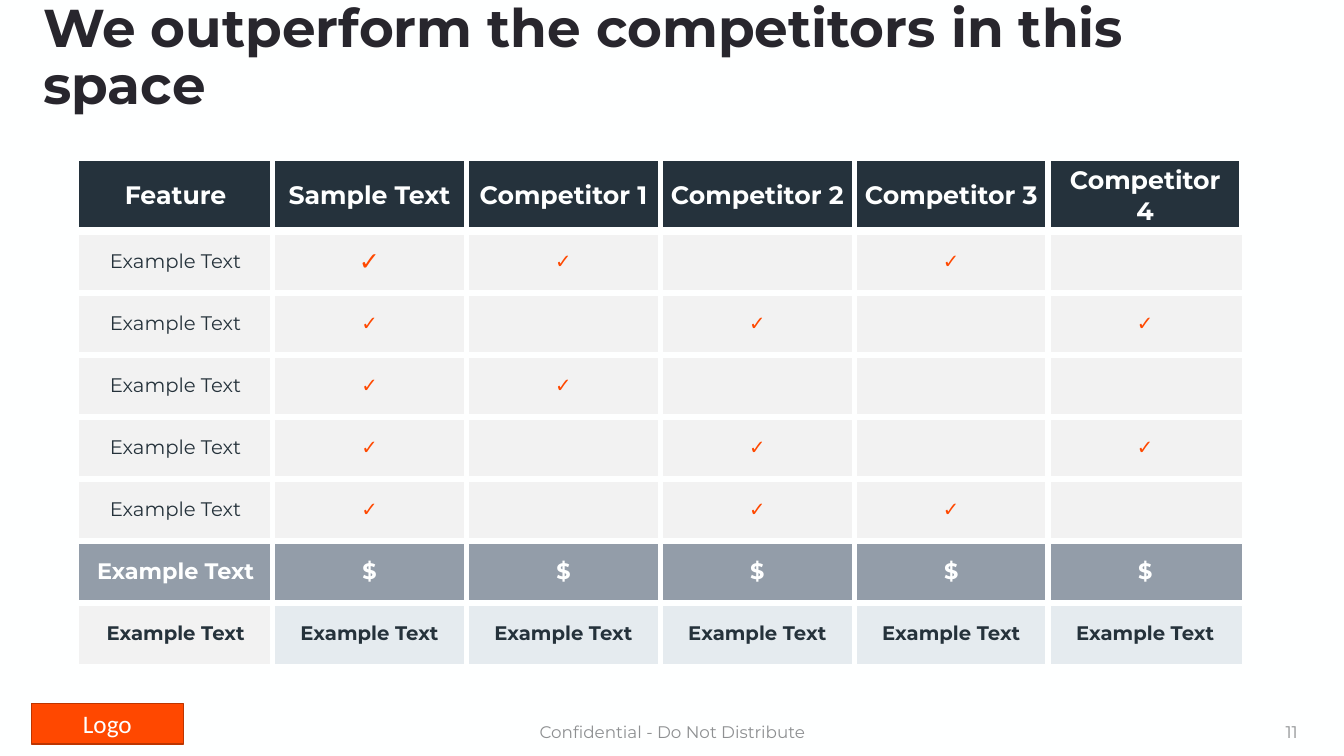
"""Build a competitor comparison slide with a feature table."""
from lxml import etree
from pptx import Presentation, util as u
from pptx.dml.color import RGBColor
from pptx.enum import shapes, text
from pptx.oxml.ns import qn

COLORS = {
    "white": "FEFFFF", "title": "28262D", "header": "25323C", "body": "25323B",
    "accent": "FF4800", "accent_edge": "BD3500", "footer": "8E9092",
    "pale": "F2F2F2", "price": "939DA9", "summary": "E5EBEF",
}
CHECK = "✓"


def write(frame, words, size, color, bold=False, align=text.PP_ALIGN.CENTER, font="Montserrat"):
    frame.text = words
    frame.word_wrap = True
    frame.vertical_anchor = text.MSO_ANCHOR.MIDDLE
    paragraph = frame.paragraphs[0]
    paragraph.alignment = align
    paragraph.font.name = font
    paragraph.font.size = u.Pt(size)
    paragraph.font.bold = bold
    paragraph.font.color.rgb = RGBColor.from_string(COLORS[color])
    return paragraph


def add_border(cell, side, width):
    line = etree.SubElement(cell._tc.get_or_add_tcPr(), qn(f"a:ln{side}"), w=str(u.Pt(width)))
    fill = etree.SubElement(line, qn("a:solidFill"))
    etree.SubElement(fill, qn("a:srgbClr"), val=COLORS["white"])


deck = Presentation()
deck.slide_width, deck.slide_height = u.Inches(13.33), u.Inches(7.5)
slide = deck.slides.add_slide(deck.slide_layouts[5])
slide.background.fill.solid()
slide.background.fill.fore_color.rgb = RGBColor.from_string(COLORS["white"])

headline = slide.shapes.title
headline.left, headline.top = u.Inches(0.33), u.Inches(0.25)
headline.width, headline.height = u.Inches(12.63), u.Inches(0.67)
headline.text_frame.auto_size = text.MSO_AUTO_SIZE.NONE
write(headline.text_frame, "We outperform the competitors in this space", 38, "title",
      bold=True, align=text.PP_ALIGN.LEFT).line_spacing = 0.9

logo = slide.shapes.add_shape(shapes.MSO_SHAPE.RECTANGLE, u.Inches(0.31), u.Inches(6.98),
                              u.Inches(1.51), u.Inches(0.4))
logo.shadow.inherit = False
logo.fill.solid()
logo.fill.fore_color.rgb = RGBColor.from_string(COLORS["accent"])
logo.line.color.rgb = RGBColor.from_string(COLORS["accent_edge"])
logo.line.width = u.Pt(1)
write(logo.text_frame, "Logo", 18, "white", font="Calibri")

for words, left, width, align in [
    ("Confidential - Do Not Distribute", 4.42, 4.5, text.PP_ALIGN.CENTER),
    ("11", 9.97, 3, text.PP_ALIGN.RIGHT),
]:
    footer = slide.shapes.add_textbox(u.Inches(left), u.Inches(7.06), u.Inches(width), u.Inches(0.4))
    write(footer.text_frame, words, 12, "footer", align=align)

companies = ["Sample Text"] + [f"Competitor {number}" for number in range(1, 5)]
features_met = [(1, 2, 4), (1, 3, 5), (1, 2), (1, 3, 5), (1, 3, 4)]
rows = [["Feature"] + companies]
rows += [["Example Text"] + [CHECK if column in met else "" for column in range(1, 6)]
         for met in features_met]
rows += [["Example Text"] + ["$"] * 5, ["Example Text"] * 6]
last_row, last_column = len(rows) - 1, len(companies)
price_row = last_row - 1

comparison = slide.shapes.add_table(len(rows), last_column + 1, u.Inches(0.78), u.Inches(1.59),
                                    u.Inches(11.54), u.Inches(4.92)).table
for r, row in enumerate(rows):
    for c, words in enumerate(row):
        cell = comparison.cell(r, c)
        add_border(cell, "L", 4.5 if c else 1)
        add_border(cell, "R", 1 if c == last_column and r else 4.5)
        add_border(cell, "T", {0: 1, 1: 6}.get(r, 4.5))
        add_border(cell, "B", {0: 6, last_row: 1}.get(r, 4.5))

        if r == 0:
            fill, size, color, bold = "header", 18, "white", True
        elif r == price_row:
            fill, size, color, bold = "price", 16, "white", True
        elif r == last_row:
            fill, size, color, bold = "summary" if c else "pale", 14, "body", True
        elif c == 0:
            fill, size, color, bold = "pale", 14, "body", False
        else:
            fill, size, color, bold = "pale", 18 if r == c == 1 else 14, "accent", True
        cell.fill.solid()
        cell.fill.fore_color.rgb = RGBColor.from_string(COLORS[fill])
        cell.vertical_anchor = text.MSO_ANCHOR.MIDDLE
        if words:
            write(cell.text_frame, words, size, color, bold)

deck.save("out.pptx")
